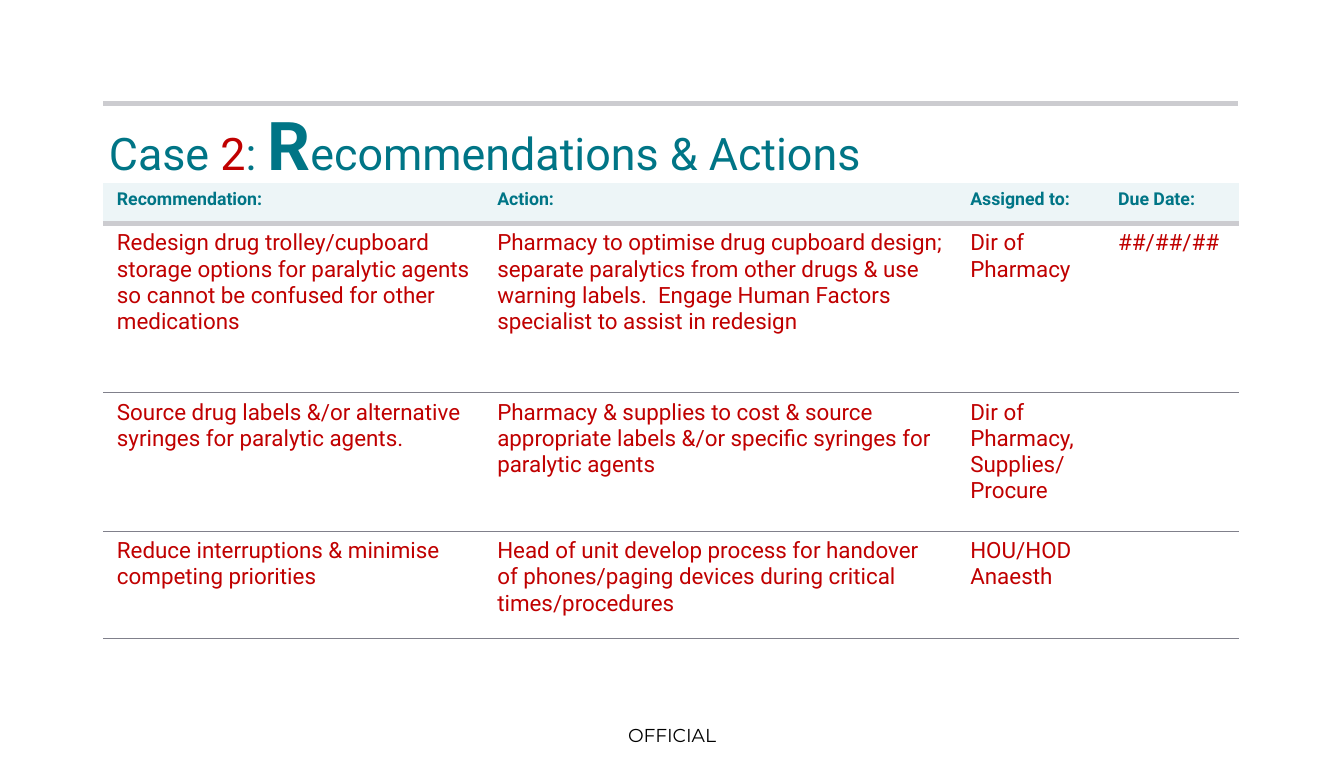
from lxml.etree import SubElement as Sub
from pptx import Presentation
from pptx.dml.color import RGBColor as RGB
from pptx.enum.shapes import MSO_CONNECTOR as Link
from pptx.enum.text import MSO_ANCHOR as Anchor, PP_ALIGN as Align
from pptx.oxml.ns import qn
from pptx.util import Inches, Pt

WIDE, HIGH = Inches(10), Inches(5.63)
TEAL = RGB(0x00, 0x75, 0x86)
RED = RGB(0xC0, 0x00, 0x00)
BLACK = RGB(0x00, 0x00, 0x00)
PALE = RGB(0xED, 0xF5, 0xF7)
SILVER = RGB(0xCC, 0xCC, 0xD0)
GREY = RGB(0x80, 0x80, 0x8B)

PLAIN = {"name": "Roboto", "size": Pt(24), "bold": False}
LARGE = {"name": "Roboto", "size": Pt(36), "bold": True}
HEAD = {"name": "Roboto", "size": Pt(9.5), "bold": True}
BODY = {"name": "Roboto", "size": Pt(12), "bold": False}
MARK = {"name": "Montserrat", "size": Pt(10)}

# Percent of the slide's width and height
LEFT = 7.7
RULE = 13.68
COLS = [28.3, 35.2, 11, 10]
ROWS = [5.33, 22.38, 18.29, 14.21]

HEADS = ["Recommendation:", "Action:", "Assigned to:", "Due Date:"]
ITEMS = [
    ["Redesign drug trolley/cupboard storage options for paralytic agents "
     "so cannot be confused for other medications",
     "Pharmacy to optimise drug cupboard design; separate paralytics from "
     "other drugs & use warning labels.  Engage Human Factors specialist "
     "to assist in redesign",
     "Dir of Pharmacy", "##/##/##"],
    ["Source drug labels &/or alternative syringes for paralytic agents.",
     "Pharmacy & supplies to cost & source appropriate labels &/or specific "
     "syringes for paralytic agents",
     "Dir of Pharmacy,\nSupplies/\nProcure", ""],
    ["Reduce interruptions & minimise competing priorities",
     "Head of unit develop process for handover of phones/paging devices "
     "during critical times/procedures",
     "HOU/HOD Anaesth", ""],
]


def across(share):
    return int(WIDE * share / 100)


def down(share):
    return int(HIGH * share / 100)


def area(x, y, w, h):
    return across(x), down(y), across(w), down(h)


def apply(thing, values):
    for key, value in values.items():
        setattr(thing, key, value)


def style(font, look, color):
    apply(font, look)
    font.color.rgb = color


def inset(frame, gap):
    sides = ("left", "top", "right", "bottom")
    apply(frame, {f"margin_{side}": gap for side in sides})


def add_run(para, text, look, color):
    run = para.add_run()
    run.text = text
    style(run.font, look, color)


def add_title(slide):
    title = slide.shapes.title
    x, y, w, h = area(LEFT, RULE, 84.6, 9.41)
    apply(title, {"left": x, "top": y, "width": w, "height": h})
    frame = title.text_frame
    apply(frame, {"vertical_anchor": Anchor.TOP, "word_wrap": True})
    inset(frame, Inches(0.04))
    para = frame.paragraphs[0]
    apply(para, {"alignment": Align.LEFT, "line_spacing": 0.95,
                 "space_after": Pt(6)})
    for text, look, color in [("Case ", PLAIN, TEAL), ("2", PLAIN, RED),
                              (": ", PLAIN, TEAL), ("R", LARGE, TEAL),
                              ("ecommendations & Actions", PLAIN, TEAL)]:
        add_run(para, text, look, color)


def add_rule(slide):
    y = down(RULE)
    rule = slide.shapes.add_connector(
        Link.STRAIGHT, across(LEFT), y, across(92.1), y)
    rule.line.color.rgb = SILVER
    rule.line.width = Pt(3)
    Sub(rule.element.spPr, qn("a:effectLst"))


def add_mark(slide):
    box = slide.shapes.add_textbox(*area(44.9, 94.49, 10.2, 5.51))
    frame = box.text_frame
    apply(frame, {"vertical_anchor": Anchor.MIDDLE, "word_wrap": True})
    inset(frame, 0)
    para = frame.paragraphs[0]
    apply(para, {"alignment": Align.CENTER, "line_spacing": 0.98})
    add_run(para, "OFFICIAL", MARK, BLACK)


def edge(cell, tag, color=None, width=0):
    """Draw one cell border, or clear it when no colour is given."""
    line = Sub(cell._tc.get_or_add_tcPr(), qn(tag), w=str(Pt(width)))
    if color is None:
        Sub(line, qn("a:noFill"))
    else:
        Sub(Sub(line, qn("a:solidFill")), qn("a:srgbClr"), val=str(color))


def fill_cell(cell, text, look, color, top, base):
    cell.text = text
    for para in cell.text_frame.paragraphs:
        style(para.font, look, color)
        for run in para.runs:
            style(run.font, look, color)
    edge(cell, "a:lnL")
    edge(cell, "a:lnR")
    edge(cell, "a:lnT", *top)
    edge(cell, "a:lnB", *base)


def add_grid(slide):
    place = area(LEFT, 24.16, sum(COLS), sum(ROWS))
    grid = slide.shapes.add_table(len(ROWS), len(COLS), *place).table
    apply(grid, {"first_row": False, "horz_banding": False})
    for col, share in zip(grid.columns, COLS):
        col.width = across(share)
    for row, share in zip(grid.rows, ROWS):
        row.height = down(share)
    thick, thin = (SILVER, 3), (GREY, 0.25)
    for cell, text in zip(grid.rows[0].cells, HEADS):
        fill_cell(cell, text, HEAD, TEAL, (PALE, 0.25), thick)
        cell.fill.solid()
        cell.fill.fore_color.rgb = PALE
    for i, item in enumerate(ITEMS, 1):
        for cell, text in zip(grid.rows[i].cells, item):
            fill_cell(cell, text, BODY, RED, thick if i == 1 else thin, thin)
            cell.fill.background()


def main():
    deck = Presentation()
    apply(deck, {"slide_width": WIDE, "slide_height": HIGH})
    slide = deck.slides.add_slide(deck.slide_layouts[5])
    add_mark(slide)
    add_rule(slide)
    add_title(slide)
    add_grid(slide)
    deck.save("out.pptx")


if __name__ == "__main__":
    main()
